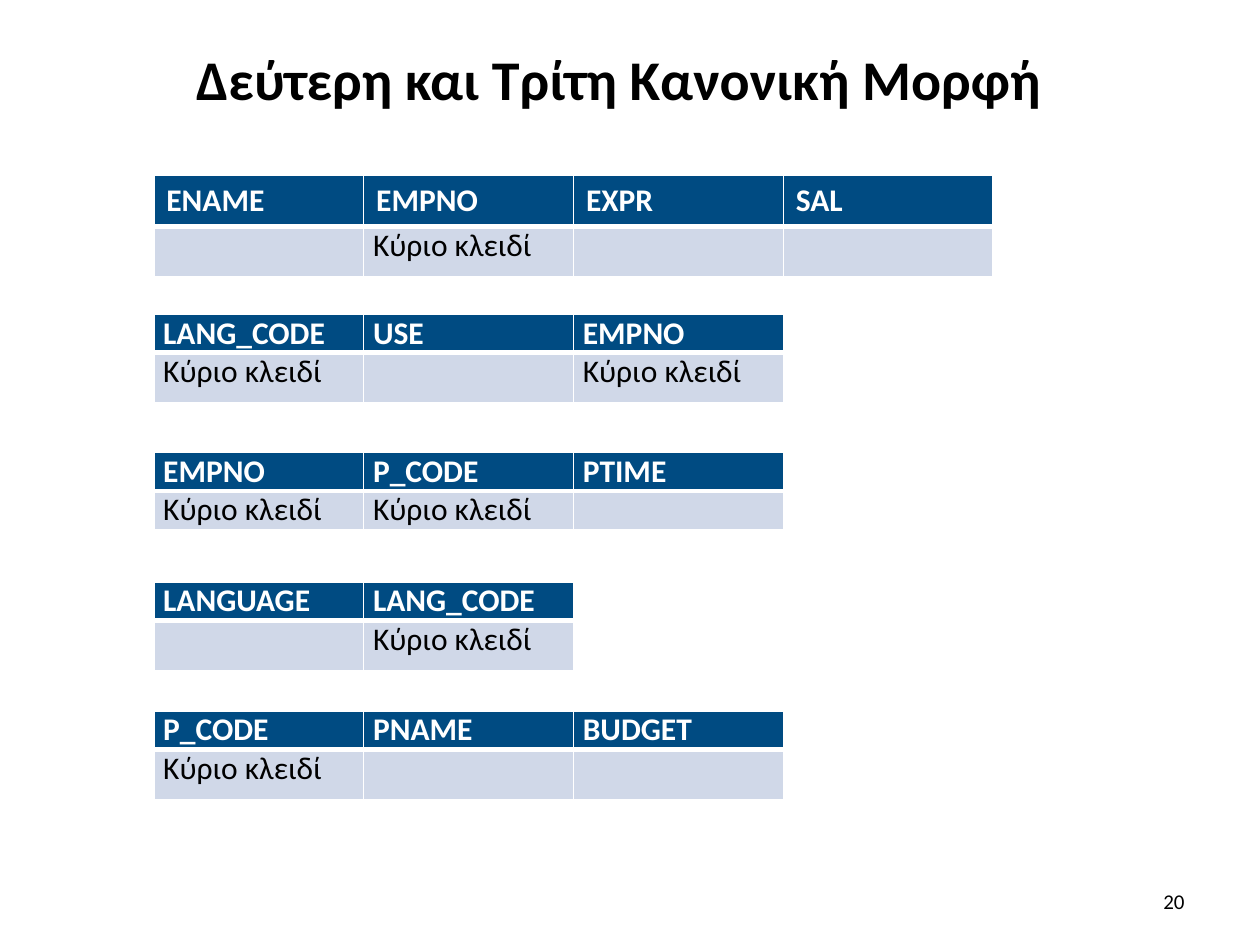
from dataclasses import dataclass

from lxml import etree
from pptx import Presentation
from pptx.dml.color import RGBColor
from pptx.enum.text import MSO_ANCHOR, PP_ALIGN
from pptx.oxml.ns import qn
from pptx.util import Cm, Pt

MIDDLE = MSO_ANCHOR.MIDDLE
LEFT, CENTER, RIGHT, JUSTIFY = PP_ALIGN.LEFT, PP_ALIGN.CENTER, PP_ALIGN.RIGHT, PP_ALIGN.JUSTIFY


@dataclass(frozen=True)
class Theme:
    font: str = "Calibri"
    black: str = "000000"
    white: str = "FFFFFF"
    header: str = "004B82"
    body: str = "D0D8E8"
    title_size: int = 32
    table_size: int = 18
    number_size: int = 12


theme = Theme()


def add_text(paragraph, text, size, color, bold=False, alignment=LEFT):
    paragraph.alignment = alignment
    run = paragraph.add_run()
    run.text = text
    run.font.name = theme.font
    run.font.size = Pt(size)
    run.font.bold = bold
    run.font.color.rgb = RGBColor.from_string(color)


def add_borders(cell, top, bottom):
    properties = cell._tc.get_or_add_tcPr()
    for side, width in (("lnL", 1), ("lnR", 1), ("lnT", top), ("lnB", bottom)):
        line = etree.SubElement(properties, qn(f"a:{side}"), w=str(Pt(width)))
        fill = etree.SubElement(line, qn("a:solidFill"))
        etree.SubElement(fill, qn("a:srgbClr"), val=theme.white)


presentation = Presentation()
presentation.slide_width, presentation.slide_height = Cm(25.4), Cm(19.05)
slide = presentation.slides.add_slide(presentation.slide_layouts[5])

# Title
title = slide.shapes.title
title.left, title.top, title.width, title.height = Cm(1.3), Cm(0.33), Cm(22.86), Cm(2.51)
title.text_frame.vertical_anchor = MIDDLE
title.text_frame.margin_right = Cm(0.76)
add_text(title.text_frame.paragraphs[0], "Δεύτερη και Τρίτη Κανονική Μορφή",
         theme.title_size, theme.black, True, CENTER)

# Relations: top, row heights, column names, key columns
KEY = "Κύριο κλειδί"
TABLE_LEFT, COLUMN_WIDTH = 3.1, 4.23
LOW, HIGH = 0.76, 1.02
relations = [
    (3.53, (HIGH, HIGH), ["ENAME", "EMPNO", "EXPR", "SAL"], {1}),
    (6.33, (LOW, HIGH), ["LANG_CODE", "USE", "EMPNO"], {0, 2}),
    (9.12, (LOW, LOW), ["EMPNO", "P_CODE", "PTIME"], {0, 1}),
    (11.73, (LOW, HIGH), ["LANGUAGE", "LANG_CODE"], {1}),
    (14.33, (LOW, HIGH), ["P_CODE", "PNAME", "BUDGET"], {0}),
]
for top, heights, names, keys in relations:
    table = slide.shapes.add_table(
        2, len(names), Cm(TABLE_LEFT), Cm(top),
        Cm(COLUMN_WIDTH * len(names)), Cm(sum(heights))).table
    for row, height in zip(table.rows, heights):
        row.height = Cm(height)
    for column, name in enumerate(names):
        table.columns[column].width = Cm(COLUMN_WIDTH)
        header, body = table.cell(0, column), table.cell(1, column)
        add_borders(header, 1, 3)
        add_borders(body, 3, 1)
        for cell, color in ((header, theme.header), (body, theme.body)):
            cell.fill.solid()
            cell.fill.fore_color.rgb = RGBColor.from_string(color)

        # A high header keeps the default margins
        roomy = heights[0] == HIGH
        for cell in [body] if roomy else [header, body]:
            cell.margin_left = cell.margin_right = Cm(0.19)
            cell.margin_top = cell.margin_bottom = 0
        add_text(header.text_frame.paragraphs[0], name, theme.table_size,
                 theme.white, True, LEFT if roomy else JUSTIFY)
        if column in keys:
            add_text(body.text_frame.paragraphs[0], KEY, theme.table_size,
                     theme.black, alignment=JUSTIFY)

# Slide number
number = slide.shapes.add_textbox(Cm(18.21), Cm(17.65), Cm(5.92), Cm(1.02)).text_frame
number.word_wrap = True
number.vertical_anchor = MIDDLE
add_text(number.paragraphs[0], "20", theme.number_size, theme.black, alignment=RIGHT)

presentation.save("out.pptx")
